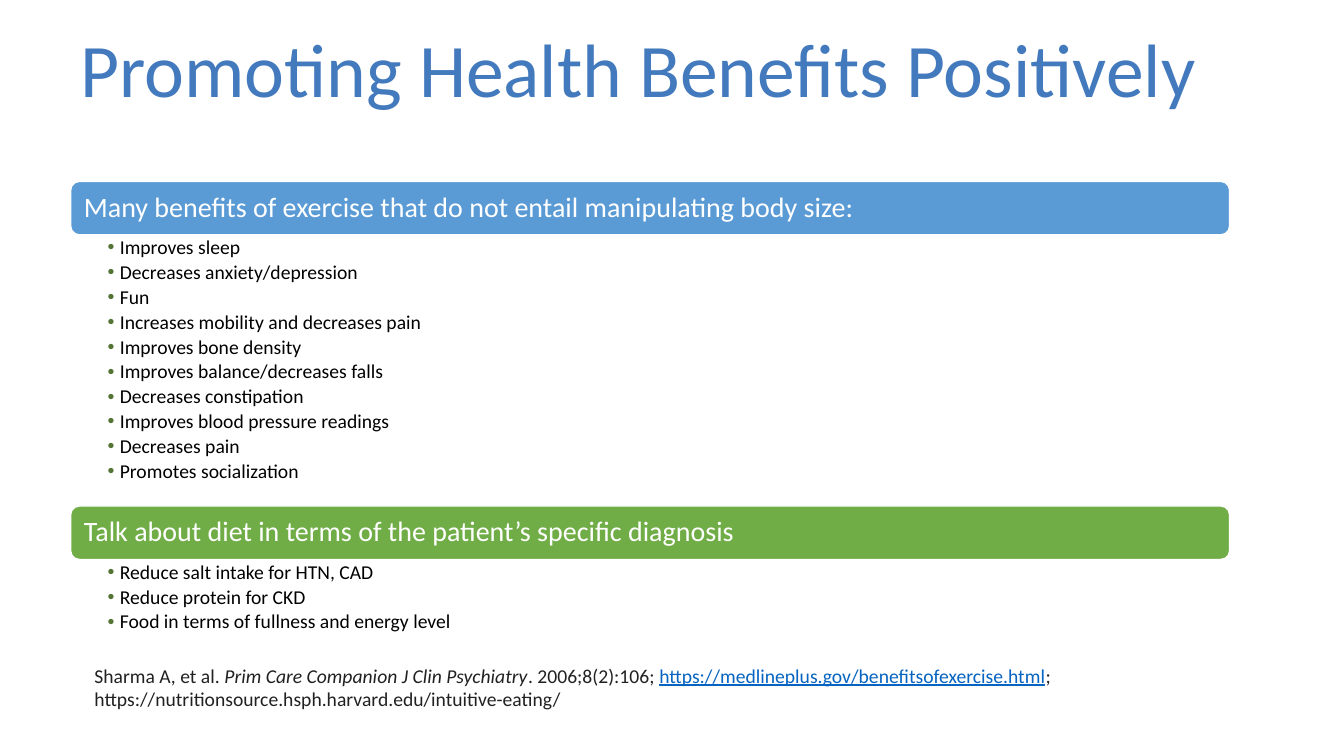
from lxml import etree
from pptx import Presentation
from pptx import util as u
from pptx.dml.color import RGBColor
from pptx.enum import shapes, text
from pptx.oxml import ns

LEFT, WIDTH, BAR = 1.78, 29.21, 1.35
GROUPS = [
    ("Many benefits of exercise that do not entail manipulating body size:", "5B9BD5", 6.83, [
        "Improves sleep",
        "Decreases anxiety/depression",
        "Fun",
        "Increases mobility and decreases pain",
        "Improves bone density",
        "Improves balance/decreases falls",
        "Decreases constipation",
        "Improves blood pressure readings",
        "Decreases pain",
        "Promotes socialization",
    ]),
    ("Talk about diet in terms of the patient’s specific diagnosis", "70AD47", 2.01, [
        "Reduce salt intake for HTN, CAD",
        "Reduce protein for CKD",
        "Food in terms of fullness and energy level",
    ]),
]
SOURCE = [
    ("Sharma A, et al. ", {}),
    ("Prim Care Companion J Clin Psychiatry", {"italic": True}),
    (". 2006;8(2):106; ", {}),
    ("https://medlineplus.gov/benefitsofexercise.html", {"color": "0563C1", "underline": True}),
    ("; https://nutritionsource.hsph.harvard.edu/intuitive-eating/", {}),
]


def paint(hue):
    return RGBColor.from_string(hue)


def place(shape, left, top, width, height):
    shape.left, shape.top = u.Cm(left), u.Cm(top)
    shape.width, shape.height = u.Cm(width), u.Cm(height)


def fit(frame, anchor, left=0.25, top=0.13, right=0.25, bottom=0.13):
    """Set wrapping, anchor and insets of a text frame."""
    frame.word_wrap = True
    frame.auto_size = text.MSO_AUTO_SIZE.NONE
    frame.vertical_anchor = anchor
    frame.margin_left, frame.margin_right = u.Cm(left), u.Cm(right)
    frame.margin_top, frame.margin_bottom = u.Cm(top), u.Cm(bottom)


def write(para, words, size, color, italic=False, underline=False):
    run = para.add_run()
    run.text = words
    font = run.font
    font.name, font.size = "Calibri", u.Pt(size)
    font.color.rgb = paint(color)
    font.italic, font.underline = italic, underline


def space(para, line=0.9, after=0):
    para.alignment = text.PP_ALIGN.LEFT
    para.line_spacing = line
    para.space_before, para.space_after = u.Pt(0), u.Pt(after)


def bullet(para, color):
    props = para._p.get_or_add_pPr()
    indent = u.Cm(0.31)
    props.set("marL", str(indent))
    props.set("indent", str(-indent))
    hue = etree.SubElement(props, ns.qn("a:buClr"))
    etree.SubElement(hue, ns.qn("a:srgbClr")).set("val", color)
    etree.SubElement(props, ns.qn("a:buFont")).set("typeface", "Arial")
    etree.SubElement(props, ns.qn("a:buChar")).set("char", "•")


def add_title(shape, words):
    place(shape, LEFT, 0, WIDTH, 3.68)
    fit(shape.text_frame, text.MSO_ANCHOR.MIDDLE)
    para = shape.text_frame.paragraphs[0]
    space(para)
    write(para, words, 54, "4379BD")


def add_bar(slide, top, words, color):
    bar = slide.shapes.add_shape(shapes.MSO_SHAPE.ROUNDED_RECTANGLE, 0, 0, 0, 0)
    place(bar, LEFT, top, WIDTH, BAR)
    bar.shadow.inherit = False
    bar.fill.solid()
    bar.fill.fore_color.rgb = paint(color)
    bar.line.color.rgb = paint("FFFFFF")
    bar.line.width = u.Pt(1)
    fit(bar.text_frame, text.MSO_ANCHOR.MIDDLE, left=0.27)
    para = bar.text_frame.paragraphs[0]
    space(para)
    write(para, words, 20, "FFFFFF")


def add_list(shape, top, height, items):
    place(shape, LEFT, top, WIDTH, height)
    frame = shape.text_frame
    fit(frame, text.MSO_ANCHOR.TOP, 0.93, 0.07, 0.36, 0.07)
    for i, item in enumerate(items):
        para = frame.add_paragraph() if i else frame.paragraphs[0]
        para.level = 1
        bullet(para, "547435")
        space(para, after=2.6)
        write(para, item, 14, "000000")


def add_source(slide):
    box = slide.shapes.add_textbox(0, 0, 0, 0)
    place(box, 2.13, 16.59, 27.94, 1.45)
    fit(box.text_frame, text.MSO_ANCHOR.TOP)
    para = box.text_frame.paragraphs[0]
    space(para, line=1.0)
    for words, style in SOURCE:
        write(para, words, 14, **{"color": "212121", **style})


def main():
    deck = Presentation()
    deck.slide_width, deck.slide_height = u.Cm(33.87), u.Cm(19.05)
    slide = deck.slides.add_slide(deck.slide_layouts.get_by_name("Two Content"))
    title, *bodies = slide.placeholders
    add_title(title, "Promoting Health Benefits Positively")
    top = 4.57
    for body, (head, color, height, items) in zip(bodies, GROUPS):
        add_bar(slide, top, head, color)
        add_list(body, top + BAR, height, items)
        top += BAR + height
    add_source(slide)
    deck.save("out.pptx")


if __name__ == "__main__":
    main()
